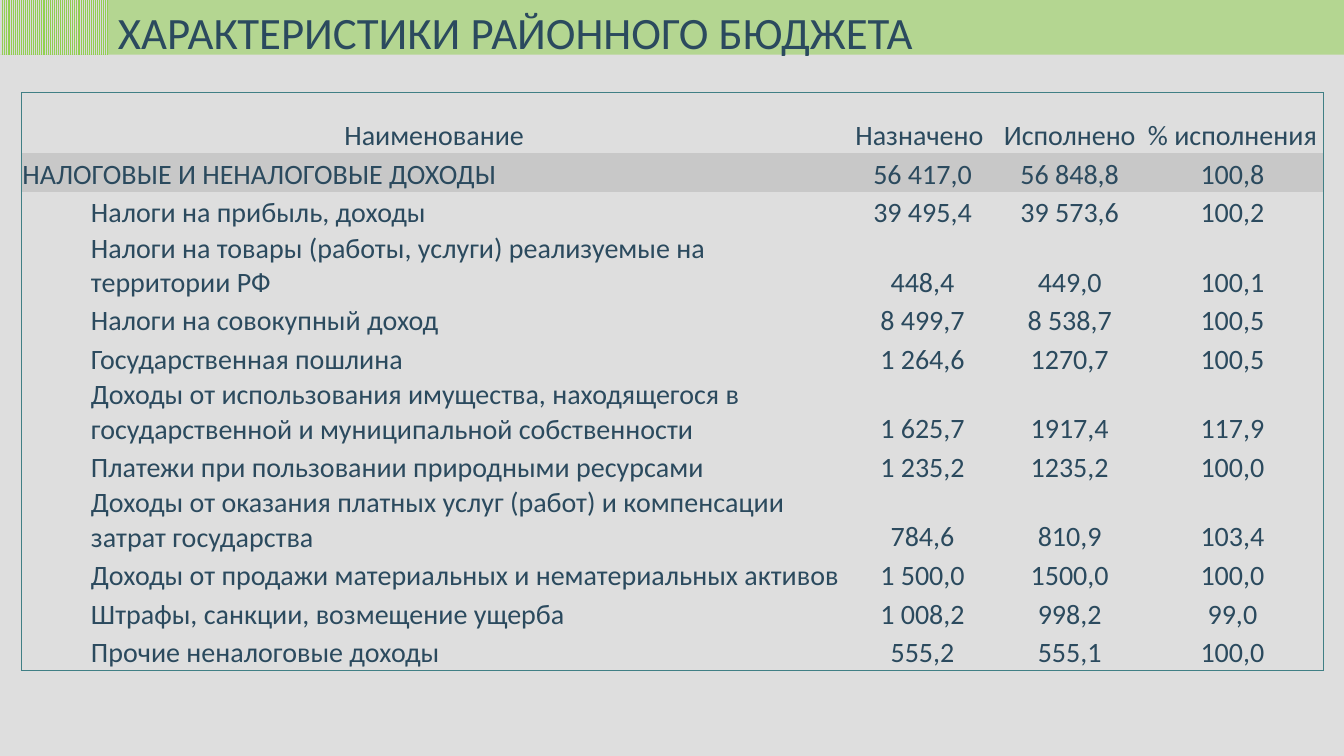
from lxml import etree
from pptx import Presentation
from pptx import util as u
from pptx.dml import color
from pptx.enum import dml, shapes, text
from pptx.oxml import ns

COLORS = {
    "background": "DEDEDE",
    "text": "2B4A5E",
    "green": "92D050",
    "stripe": "D9D9D9",
    "total": "C8C8C8",
    "border": "407F85",
}
NO_STYLE = "{2D5ABB26-0587-4C30-8999-92F81FD0307C}"
HEADER_HEIGHT, LINE_HEIGHT, DOUBLE_HEIGHT = 43.2, 27.65, 49.5
COLUMN_WIDTHS = [589.7, 108, 102.2, 130.3]
BAND_HEIGHT, STRIPES_WIDTH = 39, 77

ROWS = [
    ("Наименование", "Назначено ", "Исполнено", "% исполнения"),
    ("НАЛОГОВЫЕ И НЕНАЛОГОВЫЕ ДОХОДЫ", "56 417,0", "56 848,8", "100,8"),
    ("Налоги на прибыль, доходы", "39 495,4", "39 573,6", "100,2"),
    ("Налоги на товары (работы, услуги) реализуемые на территории РФ",
     "448,4", "449,0", "100,1"),
    ("Налоги на совокупный доход", "8 499,7", "8 538,7", "100,5"),
    ("Государственная пошлина", "1 264,6", "1270,7", "100,5"),
    ("Доходы от использования имущества, находящегося в государственной "
     "и муниципальной собственности", "1 625,7", "1917,4", "117,9"),
    ("Платежи при пользовании природными ресурсами", "1 235,2", "1235,2", "100,0"),
    ("Доходы от оказания платных услуг (работ) и компенсации затрат государства",
     "784,6", "810,9", "103,4"),
    ("Доходы от продажи материальных и нематериальных активов",
     "1 500,0", "1500,0", "100,0"),
    ("Штрафы, санкции, возмещение ущерба", "1 008,2", "998,2", "99,0"),
    ("Прочие неналоговые доходы", "555,2", "555,1", "100,0"),
]


def rgb(name):
    return color.RGBColor.from_string(COLORS[name])


def write(frame, content, size=20, align=text.PP_ALIGN.LEFT,
          anchor=text.MSO_ANCHOR.BOTTOM, insets=(0.7, 0.7, 0.7, 0)):
    """Fill a text frame or a table cell; insets are left, top, right, bottom."""
    frame.vertical_anchor = anchor
    frame.margin_left, frame.margin_top, frame.margin_right, frame.margin_bottom = (
        u.Pt(inset) for inset in insets)
    paragraph = getattr(frame, "text_frame", frame).paragraphs[0]
    paragraph.alignment = align
    run = paragraph.add_run()
    run.text = content
    run.font.size = u.Pt(size)
    run.font.name = "Calibri"
    run.font.color.rgb = rgb("text")
    return paragraph


presentation = Presentation()
presentation.slide_width, presentation.slide_height = u.Pt(960), u.Pt(540)
slide = presentation.slides.add_slide(presentation.slide_layouts[5])
slide.background.fill.solid()
slide.background.fill.fore_color.rgb = rgb("background")

# Header band with a striped block at its left end
band, stripes = (
    slide.shapes.add_shape(shapes.MSO_SHAPE.RECTANGLE, 0, 0, u.Pt(width), u.Pt(BAND_HEIGHT))
    for width in (960, STRIPES_WIDTH))
for shape in (band, stripes):
    shape.shadow.inherit = False
    shape.line.fill.background()
band.fill.solid()
band.fill.fore_color.rgb = rgb("green")
band_color = band.fill.fore_color
green = band.element.spPr.find(".//" + ns.qn("a:srgbClr"))
etree.SubElement(green, ns.qn("a:alpha"), val="54000")
stripes.fill.patterned()
stripes.fill.pattern = dml.MSO_PATTERN.LIGHT_VERTICAL
stripes.fill.fore_color.rgb = rgb("green")
stripes.fill.back_color.rgb = rgb("stripe")

title = slide.shapes.title
title.left, title.top, title.width, title.height = (
    u.Pt(value) for value in (STRIPES_WIDTH, 0, 588, 46))
title.text_frame.word_wrap = False
title.text_frame.auto_size = text.MSO_AUTO_SIZE.SHAPE_TO_FIT_TEXT
write(title.text_frame, "ХАРАКТЕРИСТИКИ РАЙОННОГО БЮДЖЕТА", size=32,
      anchor=text.MSO_ANCHOR.TOP, insets=(7.2, 3.6, 7.2, 3.6))
slide.shapes.element.append(title.element)  # bring the title above the band

# Budget table
heights = [HEADER_HEIGHT] + [
    DOUBLE_HEIGHT if len(row[0]) > 60 else LINE_HEIGHT for row in ROWS[1:]]
graphic = slide.shapes.add_table(
    len(ROWS), len(COLUMN_WIDTHS), u.Pt(15.3), u.Pt(66.2),
    u.Pt(sum(COLUMN_WIDTHS)), u.Pt(sum(heights)))
table = graphic.table
table.first_row = table.horz_banding = False
graphic.element.find(".//" + ns.qn("a:tableStyleId")).text = NO_STYLE
for column, width in zip(table.columns, COLUMN_WIDTHS):
    column.width = u.Pt(width)
for row, height in zip(table.rows, heights):
    row.height = u.Pt(height)

last_row, last_column = len(ROWS) - 1, len(COLUMN_WIDTHS) - 1
for row_index, values in enumerate(ROWS):
    for column_index, value in enumerate(values):
        cell = table.cell(row_index, column_index)
        is_name = column_index == 0 and row_index > 0
        is_item = is_name and row_index > 1
        paragraph = write(
            cell, value,
            align=text.PP_ALIGN.LEFT if is_name else text.PP_ALIGN.CENTER,
            insets=(13.7 if is_item else 0.7, 0.7, 0.7, 0))
        if is_item:
            paragraph.level = 1
            properties = paragraph.runs[0].font and paragraph._p.get_or_add_pPr()
            properties.set("marL", str(u.Pt(36)))
            properties.set("indent", "0")
        if row_index == 1:
            cell.fill.solid()
            cell.fill.fore_color.rgb = rgb("total")
        else:
            cell.fill.background()

        # Only the outer edges of the table are ruled
        edges = {"L": column_index == 0, "R": column_index == last_column,
                 "T": row_index == 0, "B": row_index == last_row}
        cell_properties = cell._tc.get_or_add_tcPr()
        for position, side in enumerate(side for side in edges if edges[side]):
            line = etree.Element(ns.qn("a:ln" + side), w=str(u.Pt(0.75)))
            fill = etree.SubElement(line, ns.qn("a:solidFill"))
            etree.SubElement(fill, ns.qn("a:srgbClr"), val=COLORS["border"])
            cell_properties.insert(position, line)

presentation.save("out.pptx")
